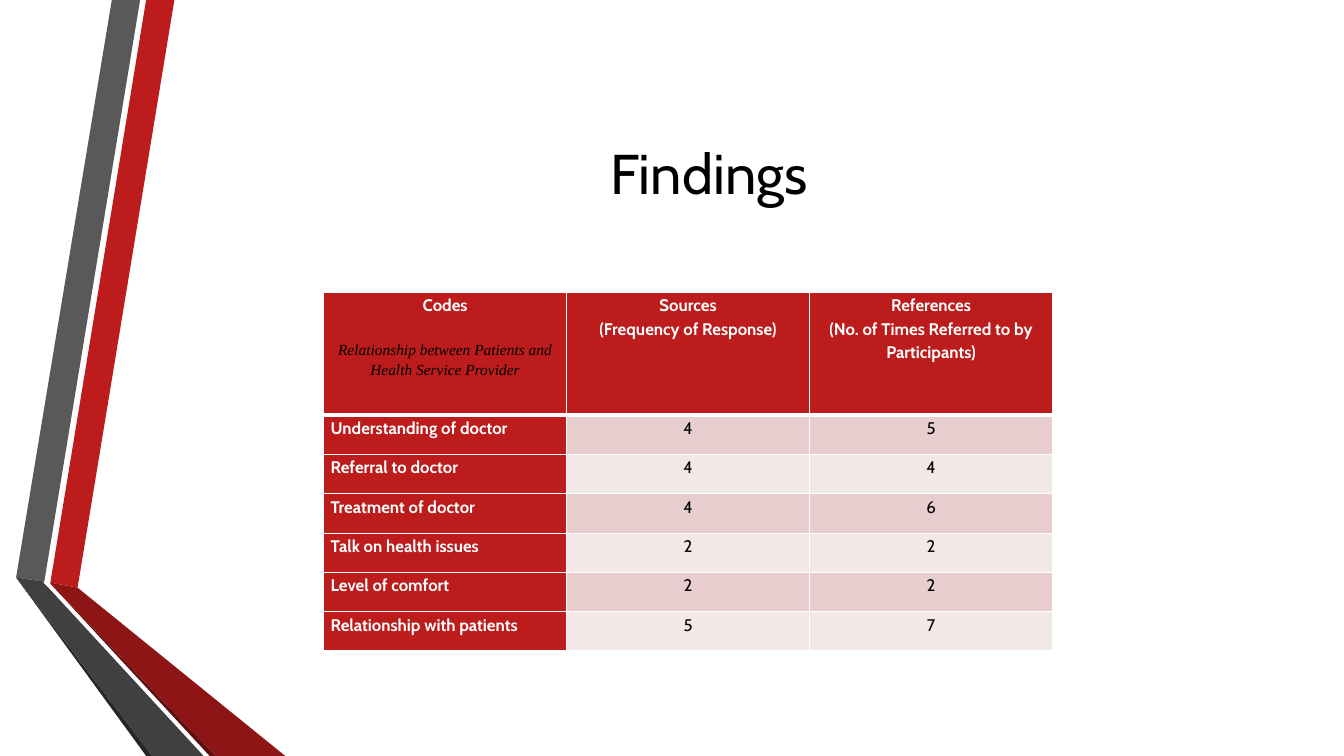
import pptx
import pptx.dml.color
import pptx.enum.text
import pptx.oxml
import pptx.oxml.ns
import pptx.util
from pptx.util import Inches

RED, WHITE, BLACK = "BC1C1C", "FFFFFF", "000000"
BANDS = ["E7CDCD", "F3E8E8"]
CENTER = pptx.enum.text.PP_ALIGN.CENTER
LEFT = pptx.enum.text.PP_ALIGN.LEFT

RIBBONS = [
    (RED, [(0.5, 5.78), (0.77, 5.83), (1.73, 0), (1.45, 0)]),
    ("595959", [(1.39, 0), (1.11, 0), (0.16, 5.73), (0.44, 5.77)]),
    ("262626", [(0.16, 5.73), (1.45, 7.5), (1.51, 7.5)]),
    ("5E0E0E", [(0.5, 5.79), (2.08, 7.5), (2.14, 7.5)]),
    ("8D1515", [(0.5, 5.79), (2.14, 7.5), (2.83, 7.5), (0.77, 5.83), (0.5, 5.78)]),
    ("404040", [(2.02, 7.5), (0.48, 5.83), (0.43, 5.78), (0.44, 5.77), (0.16, 5.73), (1.51, 7.5)]),
]

HEADINGS = [
    ["Codes", "Relationship between Patients and Health Service Provider"],
    ["Sources", "(Frequency of Response)"],
    ["References", "(No. of Times Referred to by Participants)"],
]

FINDINGS = [
    ("Understanding of doctor", 4, 5),
    ("Referral to doctor", 4, 4),
    ("Treatment of doctor", 4, 6),
    ("Talk on health issues", 2, 2),
    ("Level of comfort", 2, 2),
    ("Relationship with patients", 5, 7),
]


def color(value):
    return pptx.dml.color.RGBColor.from_string(value)


def write(paragraph, text, size=12, font="Cabin", ink=BLACK, bold=False,
          italic=False, align=CENTER, spacing=1.15, before=0):
    run = paragraph.add_run()
    run.text = text
    run.font.size = pptx.util.Pt(size)
    run.font.name = font
    run.font.color.rgb = color(ink)
    run.font.bold = bold
    run.font.italic = italic
    paragraph.alignment = align
    paragraph.line_spacing = spacing
    paragraph.space_before = pptx.util.Pt(before)


class FindingsSlide:
    """Draws the ribbons, title and table of one slide in a shared style."""

    def __init__(self, slide):
        self.slide = slide
        self.slide.background.fill.solid()
        self.slide.background.fill.fore_color.rgb = color(WHITE)

    def ribbon(self, fill, points):
        corners = [(Inches(x), Inches(y)) for x, y in points]
        builder = self.slide.shapes.build_freeform(*corners[0], scale=1.0)
        builder.add_line_segments(corners[1:], close=True)
        band = builder.convert_to_shape()
        band.shadow.inherit = False
        band.fill.solid()
        band.fill.fore_color.rgb = color(fill)
        band.line.fill.background()

    def title(self, text, left, top, width, height):
        heading = self.slide.shapes.add_textbox(
            Inches(left), Inches(top), Inches(width), Inches(height)).text_frame
        heading.word_wrap = True
        heading.vertical_anchor = pptx.enum.text.MSO_ANCHOR.MIDDLE
        write(heading.paragraphs[0], text, size=40, spacing=1.0)

    def cell(self, cell, fill, bottom=1):
        cell.margin_left = cell.margin_right = Inches(0.07)
        cell.margin_top = cell.margin_bottom = 0
        properties = cell._tc.get_or_add_tcPr()
        for side, points in (("L", 1), ("R", 1), ("T", 1), ("B", bottom)):
            properties.append(pptx.oxml.parse_xml(
                f'<a:ln{side} {pptx.oxml.ns.nsdecls("a")} w="{pptx.util.Pt(points)}">'
                f'<a:solidFill><a:srgbClr val="{WHITE}"/></a:solidFill></a:ln{side}>'))
        cell.fill.solid()
        cell.fill.fore_color.rgb = color(fill)
        return cell.text_frame

    def table(self, left, top, column_width, header_height, row_height):
        table = self.slide.shapes.add_table(
            len(FINDINGS) + 1, len(HEADINGS), Inches(left), Inches(top),
            Inches(column_width * len(HEADINGS)),
            Inches(header_height + row_height * len(FINDINGS))).table
        table.first_col = True
        for column in table.columns:
            column.width = Inches(column_width)
        for index, row in enumerate(table.rows):
            row.height = Inches(row_height if index else header_height)

        for column, (name, detail) in enumerate(HEADINGS):
            frame = self.cell(table.cell(0, column), RED, bottom=3)
            write(frame.paragraphs[0], name, ink=WHITE, bold=True)
            if column:
                write(frame.add_paragraph(), detail, ink=WHITE, bold=True)
            else:
                write(frame.add_paragraph(), detail, size=11,
                      font="Times New Roman", italic=True, before=16.7)

        for row, (code, *counts) in enumerate(FINDINGS, 1):
            frame = self.cell(table.cell(row, 0), RED, bottom=1)
            write(frame.paragraphs[0], code, ink=WHITE, bold=True, align=LEFT)
            for column, count in enumerate(counts, 1):
                frame = self.cell(table.cell(row, column), BANDS[(row - 1) % 2])
                write(frame.paragraphs[0], str(count))


def main():
    deck = pptx.Presentation()
    deck.slide_width, deck.slide_height = Inches(13.33), Inches(7.5)
    findings = FindingsSlide(deck.slides.add_slide(deck.slide_layouts[6]))
    for fill, points in RIBBONS:
        findings.ribbon(fill, points)
    findings.title("Findings", 1.55, 0.75, 10.96, 1.92)
    findings.table(3.21, 2.9, column_width=2.41, header_height=1.22, row_height=0.39)
    deck.save("out.pptx")


if __name__ == "__main__":
    main()
